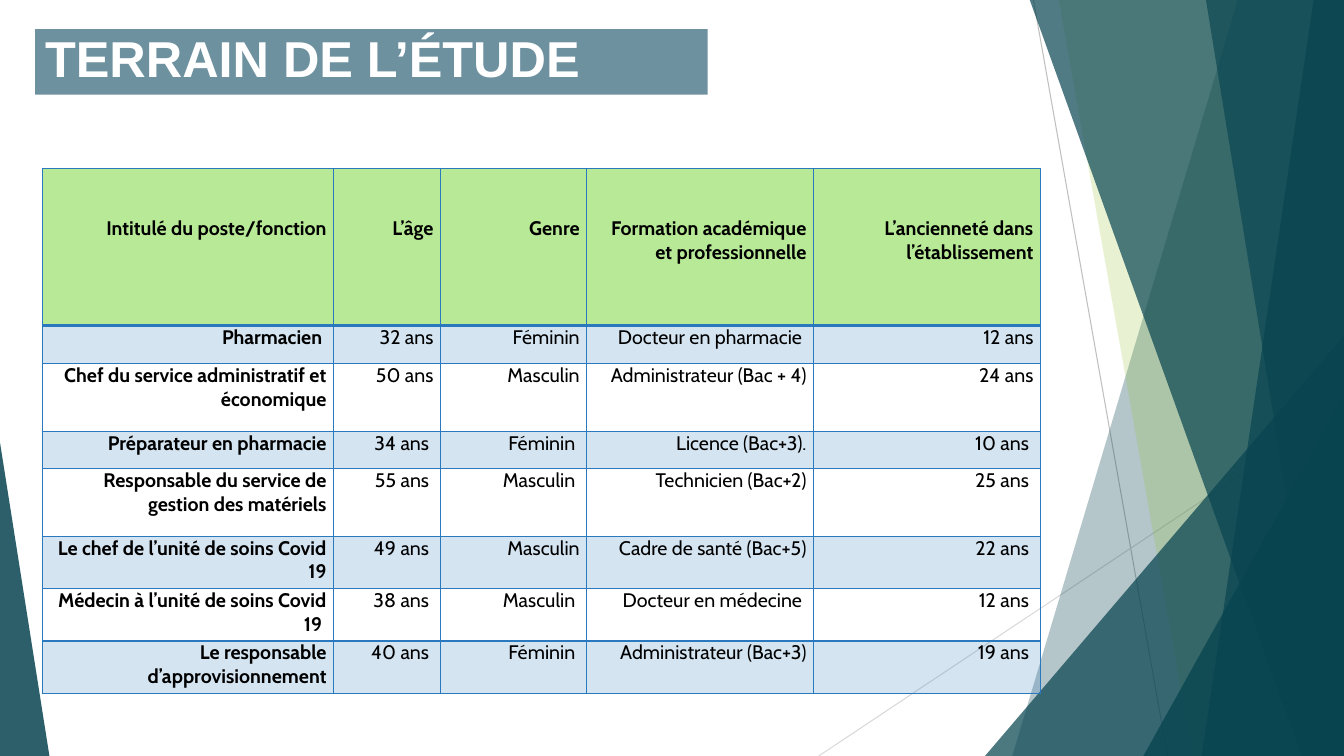
import pptx
import pptx.dml.color
import pptx.enum.shapes
import pptx.enum.text
import pptx.oxml
import pptx.oxml.ns
import pptx.oxml.xmlchemy
import pptx.util
from pptx.util import Inches

SLIDE_WIDTH, SLIDE_HEIGHT = 13.33, 7.5
TEAL, GREEN, BLUE = "084450", "90C226", "2A78BD"

# Top-left x, bottom-left x, colour, opacity of the bands reaching the right edge
BACK_BANDS = [(12.28, 10.04, TEAL, 30), (10.5, 11.83, GREEN, 20)]
FRONT_BANDS = [(10.21, 12.91, TEAL, 70), (13.03, 11.92, TEAL, 70), (11.96, 13.18, TEAL, 65)]

COLUMN_WIDTHS = [2.89, 1.06, 1.45, 2.25, 2.25]
ROW_HEIGHTS = [1.56, 0.38, 0.67, 0.37, 0.67, 0.52, 0.52, 0.52]
ROWS = [
    ["Intitulé du poste/fonction", "L’âge", "Genre",
     "Formation académique et professionnelle", "L’ancienneté dans l’établissement"],
    ["Pharmacien ", "32 ans", "Féminin", "Docteur en pharmacie ", "12 ans"],
    ["Chef du service administratif et économique", "50 ans", "Masculin",
     "Administrateur (Bac + 4)", "24 ans"],
    ["Préparateur en pharmacie", "34 ans ", "Féminin ", "Licence (Bac+3).", "10 ans "],
    ["Responsable du service de gestion des matériels", "55 ans ", "Masculin ",
     "Technicien (Bac+2)", "25 ans "],
    ["Le chef de l’unité de soins Covid 19", "49 ans ", "Masculin",
     "Cadre de santé (Bac+5)", "22 ans "],
    ["Médecin à l’unité de soins Covid 19 ", "38 ans ", "Masculin ",
     "Docteur en médecine ", "12 ans "],
    ["Le responsable d’approvisionnement", "40 ans ", "Féminin ",
     "Administrateur (Bac+3)", "19 ans "],
]


def color(value):
    return pptx.dml.color.RGBColor.from_string(value)


def set_fill(fill, properties, value, opacity=100):
    fill.solid()
    fill.fore_color.rgb = color(value)
    if opacity < 100:
        # Transparency goes on the fill's colour element
        solid_fill = properties.find(pptx.oxml.ns.qn("a:solidFill"))
        alpha = pptx.oxml.xmlchemy.OxmlElement("a:alpha")
        alpha.set("val", str(opacity * 1000))
        solid_fill[0].append(alpha)


def style_shape(shape, value, opacity=100):
    shape.shadow.inherit = False
    set_fill(shape.fill, shape._element.spPr, value, opacity)
    shape.line.fill.background()


def set_font(paragraph, name, size, value, bold):
    font = paragraph.font
    font.name = name
    font.size = pptx.util.Pt(size)
    font.bold = bold
    font.color.rgb = color(value)


def add_line(slide, start, end, value):
    line = slide.shapes.add_connector(
        pptx.enum.shapes.MSO_CONNECTOR.STRAIGHT, *map(Inches, start + end))
    line.line.color.rgb = color(value)
    line.line.width = pptx.util.Pt(0.75)
    line._element.spPr.append(pptx.oxml.xmlchemy.OxmlElement("a:effectLst"))


def add_band(slide, top_x, bottom_x, value, opacity):
    corners = [(top_x, -0.01), (SLIDE_WIDTH, -0.01),
               (SLIDE_WIDTH, SLIDE_HEIGHT), (bottom_x, SLIDE_HEIGHT)]
    points = [(Inches(x), Inches(y)) for x, y in corners]
    builder = slide.shapes.build_freeform(*points[0])
    builder.add_line_segments(points[1:], close=True)
    style_shape(builder.convert_to_shape(), value, opacity)


def add_triangle(slide, left, top, width, apex, opacity):
    triangle = slide.shapes.add_shape(
        pptx.enum.shapes.MSO_SHAPE.ISOSCELES_TRIANGLE,
        Inches(left), Inches(top), Inches(width), Inches(SLIDE_HEIGHT - top))
    triangle.adjustments[0] = apex
    style_shape(triangle, TEAL, opacity)


def add_borders(properties, top_width, bottom_width):
    for side, width in (("L", 1), ("R", 1), ("T", top_width), ("B", bottom_width)):
        properties.append(pptx.oxml.parse_xml(
            f'<a:ln{side} {pptx.oxml.ns.nsdecls("a")} w="{width * 12700}">'
            f'<a:solidFill><a:srgbClr val="{BLUE}"/></a:solidFill></a:ln{side}>'))


def fill_cell(cell, text, row, column):
    cell.margin_left = cell.margin_right = Inches(0.07)
    cell.margin_top = Inches(0.48 if row == 0 else 0)
    cell.margin_bottom = 0
    properties = cell._tc.get_or_add_tcPr()
    add_borders(properties, 2 if row == 1 else 1, 2 if row == 0 else 1)
    if row == 0:
        set_fill(cell.fill, properties, "B7E996")
    elif row % 2:
        set_fill(cell.fill, properties, BLUE, 20)
    else:
        cell.fill.background()
    cell.text = text
    paragraph = cell.text_frame.paragraphs[0]
    paragraph.alignment = pptx.enum.text.PP_ALIGN.RIGHT
    set_font(paragraph, "Cabin", 14, "000000", row == 0 or column == 0)


def add_staff_table(slide):
    table = slide.shapes.add_table(
        len(ROWS), len(COLUMN_WIDTHS), Inches(0.42), Inches(1.67),
        Inches(sum(COLUMN_WIDTHS)), Inches(sum(ROW_HEIGHTS))).table
    table.first_row = table.horz_banding = False
    for column, width in zip(table.columns, COLUMN_WIDTHS):
        column.width = Inches(width)
    for row, height in zip(table.rows, ROW_HEIGHTS):
        row.height = Inches(height)
    for row, texts in enumerate(ROWS):
        for column, text in enumerate(texts):
            fill_cell(table.cell(row, column), text, row, column)


def add_title(slide, text):
    title = slide.shapes.add_shape(
        pptx.enum.shapes.MSO_SHAPE.RECTANGLE,
        Inches(0.35), Inches(0.29), Inches(6.67), Inches(0.65))
    style_shape(title, "6E91A0")
    frame = title.text_frame
    frame.word_wrap = True
    frame.vertical_anchor = pptx.enum.text.MSO_ANCHOR.TOP
    frame.text = text
    paragraph = frame.paragraphs[0]
    paragraph.alignment = pptx.enum.text.PP_ALIGN.LEFT
    paragraph.line_spacing = 0.9
    set_font(paragraph, "Arial", 36, "FFFFFF", True)


def main():
    presentation = pptx.Presentation()
    presentation.slide_width = Inches(SLIDE_WIDTH)
    presentation.slide_height = Inches(SLIDE_HEIGHT)
    slide = presentation.slides.add_slide(presentation.slide_layouts[6])

    # Background decoration
    add_line(slide, (10.25, 0), (11.58, SLIDE_HEIGHT), "BFBFBF")
    add_line(slide, (SLIDE_WIDTH, 4.03), (8.12, SLIDE_HEIGHT), "D9D9D9")
    for band in BACK_BANDS:
        add_band(slide, *band)
    add_triangle(slide, 9.77, 3.33, 3.56, 1, 72)
    for band in FRONT_BANDS:
        add_band(slide, *band)
    add_triangle(slide, 11.34, 3.93, 1.99, 1, 80)
    add_triangle(slide, 0, 4.39, 0.49, 0, 85)

    # Content
    add_staff_table(slide)
    add_title(slide, "TERRAIN DE L’ÉTUDE")
    presentation.save("out.pptx")


if __name__ == "__main__":
    main()
